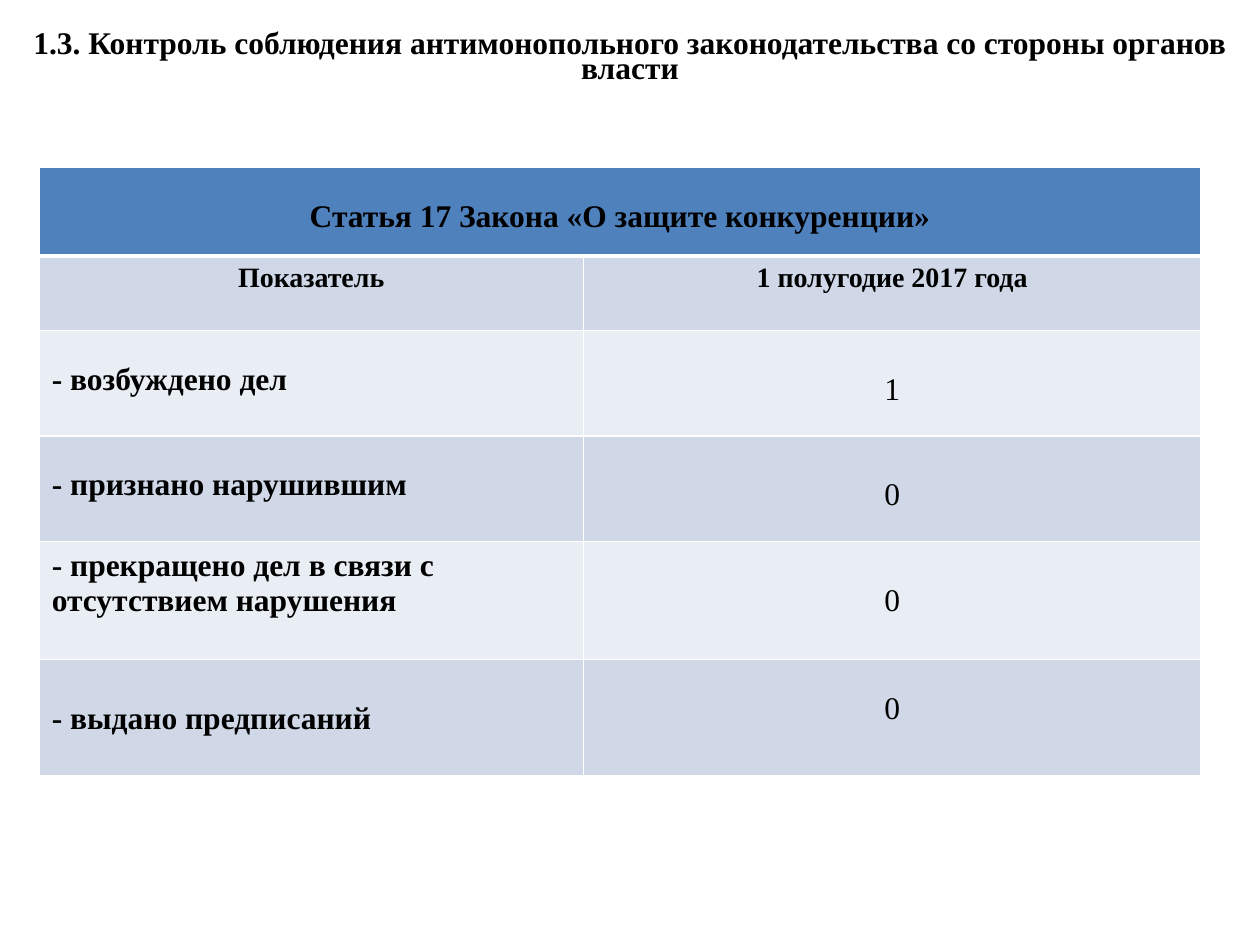
from lxml.etree import SubElement
from pptx import Presentation
from pptx.dml.color import RGBColor
from pptx.enum.text import MSO_AUTO_SIZE, PP_ALIGN
from pptx.oxml.ns import qn
from pptx.util import Cm, Pt

TITLE = "1.3. Контроль соблюдения антимонопольного законодательства со стороны органов власти"
HEADING = "Статья 17 Закона «О защите конкуренции»"
TOP, MIDDLE, LOW = 0.13, 0.64, 0.84
INDICATORS = [
    ("- возбуждено дел", MIDDLE, "1", LOW),
    ("- признано нарушившим", MIDDLE, "0", LOW),
    ("- прекращено дел в связи с отсутствием нарушения", TOP, "0", LOW),
    ("- выдано предписаний", LOW, "0", MIDDLE),
]
COLUMN_WIDTHS = (10.97, 12.45)
ROW_HEIGHTS = (1.78, 1.5, 2.13, 2.13, 2.37, 2.34)
HEADING_FILL = "4F81BD"
BAND_FILLS = ("D0D8E8", "E9EDF4")


def color(value):
    """Turn a hex string into a colour."""
    return RGBColor.from_string(value)


def write(frame, text, size=18, bold=True, centered=True):
    """Put one formatted paragraph into a text frame."""
    frame.text = text
    paragraph = frame.paragraphs[0]
    paragraph.alignment = PP_ALIGN.CENTER if centered else PP_ALIGN.LEFT
    font = paragraph.runs[0].font
    font.name, font.size, font.bold = "Times New Roman", Pt(size), bold
    font.color.rgb = color("000000")
    return paragraph


def add_title(slide):
    """Add the title across the top of the slide."""
    title = slide.shapes.add_textbox(Cm(0), Cm(0.58), Cm(25.4), Cm(1.27))
    title.text_frame.word_wrap = True
    title.text_frame.auto_size = MSO_AUTO_SIZE.SHAPE_TO_FIT_TEXT
    write(title.text_frame, TITLE).line_spacing = 0.66


def style_cell(cell, fill, bottom=1, top=1):
    """Give a cell white borders and a solid fill."""
    properties = cell._tc.get_or_add_tcPr()
    for side, width in (("L", 1), ("R", 1), ("T", top), ("B", bottom)):
        border = SubElement(properties, qn(f"a:ln{side}"), w=str(Pt(width)))
        solid = SubElement(border, qn("a:solidFill"))
        SubElement(solid, qn("a:srgbClr"), val="FFFFFF")
    cell.fill.solid()
    cell.fill.fore_color.rgb = color(fill)


def fill_cell(cell, text, margin, **formatting):
    """Write a cell's text at a distance from its top edge."""
    cell.margin_top = Cm(margin)
    write(cell.text_frame, text, **formatting)


def add_indicators(slide):
    """Add the table of case counts."""
    table = slide.shapes.add_table(
        len(ROW_HEIGHTS), len(COLUMN_WIDTHS), Cm(0.79), Cm(3.38),
        Cm(sum(COLUMN_WIDTHS)), Cm(sum(ROW_HEIGHTS))).table
    table.first_row = table.horz_banding = False
    for column, width in zip(table.columns, COLUMN_WIDTHS):
        column.width = Cm(width)
    for index, (row, height) in enumerate(zip(table.rows, ROW_HEIGHTS)):
        row.height = Cm(height)
        fill = BAND_FILLS[(index - 1) % 2] if index else HEADING_FILL
        for cell in row.cells:
            style_cell(cell, fill, 1 if index else 3, 3 if index == 1 else 1)

    table.cell(0, 0).merge(table.cell(0, 1))
    fill_cell(table.cell(0, 0), HEADING, MIDDLE)
    for column, label in enumerate(("Показатель", "1 полугодие 2017 года")):
        fill_cell(table.cell(1, column), label, TOP, size=16)
    for index, (name, name_margin, count, count_margin) in enumerate(INDICATORS, 2):
        fill_cell(table.cell(index, 0), name, name_margin, centered=False)
        fill_cell(table.cell(index, 1), count, count_margin, bold=False)


def main():
    """Build the slide and save it."""
    presentation = Presentation()
    presentation.slide_width, presentation.slide_height = Cm(25.4), Cm(19.05)
    slide = presentation.slides.add_slide(presentation.slide_layouts[6])
    add_indicators(slide)
    add_title(slide)
    presentation.save("out.pptx")


if __name__ == "__main__":
    main()
